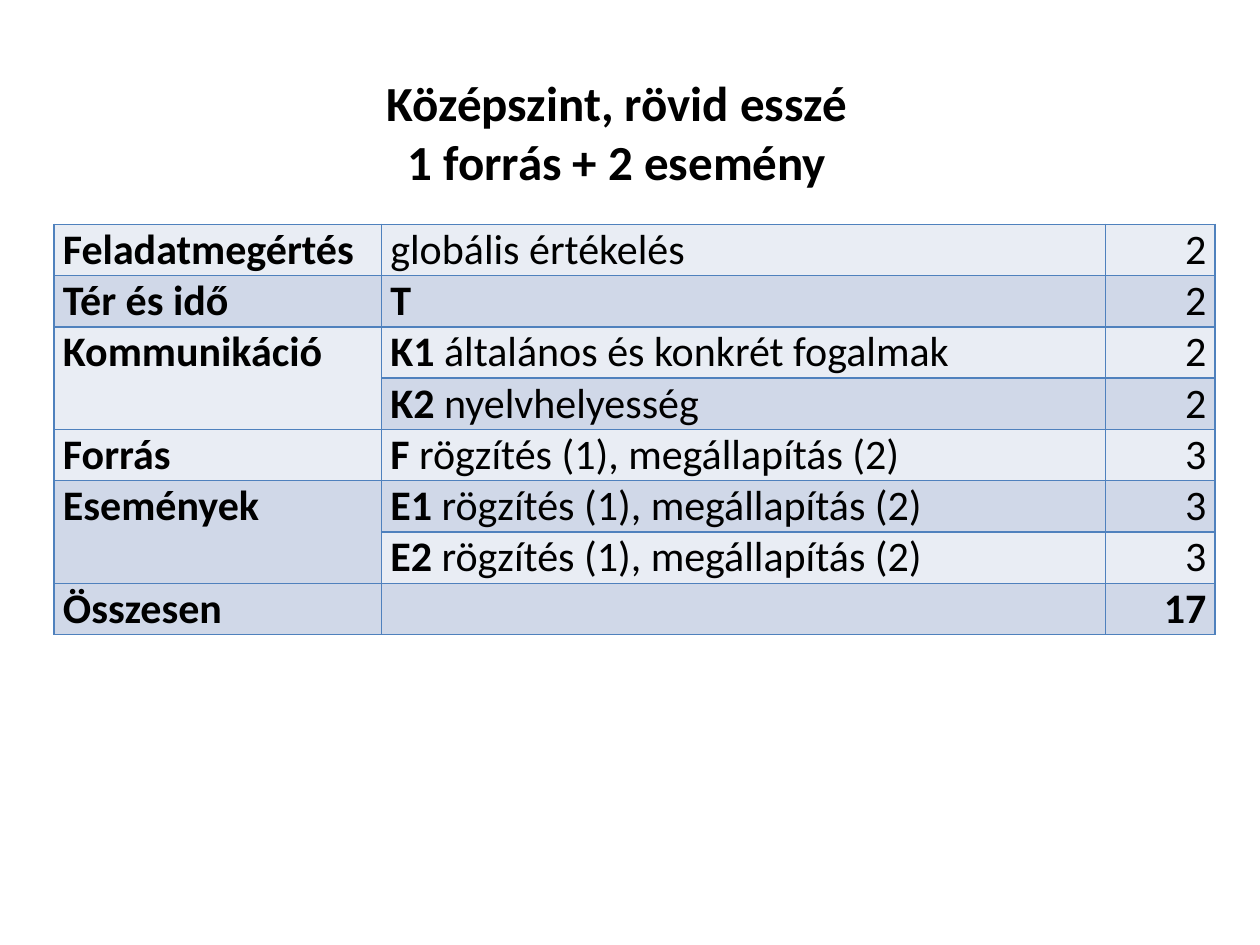
from lxml import etree
from pptx import Presentation, util as u
from pptx.dml import color
from pptx.enum import text
from pptx.oxml import ns

WIDTH, HEIGHT = u.Inches(10), u.Inches(7.5)
LIGHT, DARK, BORDER, INK = "E9EDF4", "D0D8E8", "4F81BD", "000000"
COLUMNS = (2.6, 5.75, 0.87)  # relative column widths

TITLE = ("Középszint, rövid esszé", "1 forrás + 2 esemény")
DETAIL = " rögzítés (1), megállapítás (2)"
# criterion (empty: belongs to the row above), code, description, points
CRITERIA = (
    ("Feladatmegértés", "", "globális értékelés", "2"),
    ("Tér és idő", "T", "", "2"),
    ("Kommunikáció", "K1", " általános és konkrét fogalmak", "2"),
    ("", "K2", " nyelvhelyesség", "2"),
    ("Forrás", "F", DETAIL, "3"),
    ("Események", "E1", DETAIL, "3"),
    ("", "E2", DETAIL, "3"),
    ("Összesen", "", "", "17"),
)


def rgb(value):
    return color.RGBColor.from_string(value)


def share(left, top, width, height):
    """Turn shares of the slide's size into a box."""
    return (int(left * WIDTH), int(top * HEIGHT),
            int(width * WIDTH), int(height * HEIGHT))


def apply(target, values):
    for name, value in values.items():
        setattr(target, name, value)


def add_run(paragraph, words, size, bold):
    run = paragraph.add_run()
    run.text = words
    apply(run.font, {"name": "Calibri", "size": u.Pt(size), "bold": bold})
    run.font.color.rgb = rgb(INK)


def add_borders(cell):
    properties = cell._tc.get_or_add_tcPr()
    for position, side in enumerate(("lnL", "lnR", "lnT", "lnB")):
        line = etree.Element(ns.qn(f"a:{side}"), w=str(u.Pt(1)))
        fill = etree.SubElement(line, ns.qn("a:solidFill"))
        etree.SubElement(fill, ns.qn("a:srgbClr"), val=BORDER)
        properties.insert(position, line)


def fill_cell(cell, runs, shade, alignment):
    apply(cell, {"margin_left": u.Inches(0.07), "margin_right": u.Inches(0.07),
                 "margin_top": 0, "margin_bottom": 0})
    cell.fill.solid()
    cell.fill.fore_color.rgb = rgb(shade)
    add_borders(cell)
    paragraph = cell.text_frame.paragraphs[0]
    paragraph.alignment = alignment
    for words, bold in runs:
        if words:
            add_run(paragraph, words, 24, bold)


def add_title(slide, box):
    frame = slide.shapes.add_textbox(*box).text_frame
    apply(frame, {"word_wrap": False,
                  "vertical_anchor": text.MSO_ANCHOR.MIDDLE,
                  "auto_size": text.MSO_AUTO_SIZE.SHAPE_TO_FIT_TEXT})
    for index, words in enumerate(TITLE):
        paragraph = frame.add_paragraph() if index else frame.paragraphs[0]
        paragraph.alignment = text.PP_ALIGN.CENTER
        add_run(paragraph, words, 28, True)


def add_scores(slide, box):
    table = slide.shapes.add_table(len(CRITERIA), len(COLUMNS), *box).table
    apply(table, {"first_row": False, "horz_banding": False})
    for column, part in zip(table.columns, COLUMNS):
        column.width = int(box[2] * part / sum(COLUMNS))

    last = len(CRITERIA) - 1
    for row, (criterion, code, description, points) in enumerate(CRITERIA):
        shade = DARK if row % 2 else LIGHT
        contents = (
            ([(criterion, True)], text.PP_ALIGN.LEFT),
            ([(code, True), (description, False)], text.PP_ALIGN.LEFT),
            ([(points, row == last)], text.PP_ALIGN.RIGHT),
        )
        for column, (runs, alignment) in enumerate(contents):
            fill_cell(table.cell(row, column), runs, shade, alignment)
        # A row without a criterion continues the one above
        if not criterion:
            table.cell(row - 1, 0).merge(table.cell(row, 0))


def main():
    presentation = Presentation()
    apply(presentation, {"slide_width": WIDTH, "slide_height": HEIGHT})
    slide = presentation.slides.add_slide(presentation.slide_layouts[6])
    # Score table, then the heading above it
    add_scores(slide, share(0.043, 0.2373, 0.9215, 0.4267))
    add_title(slide, share(0.295, 0.07, 0.389, 0.139))
    presentation.save("out.pptx")


if __name__ == "__main__":
    main()
